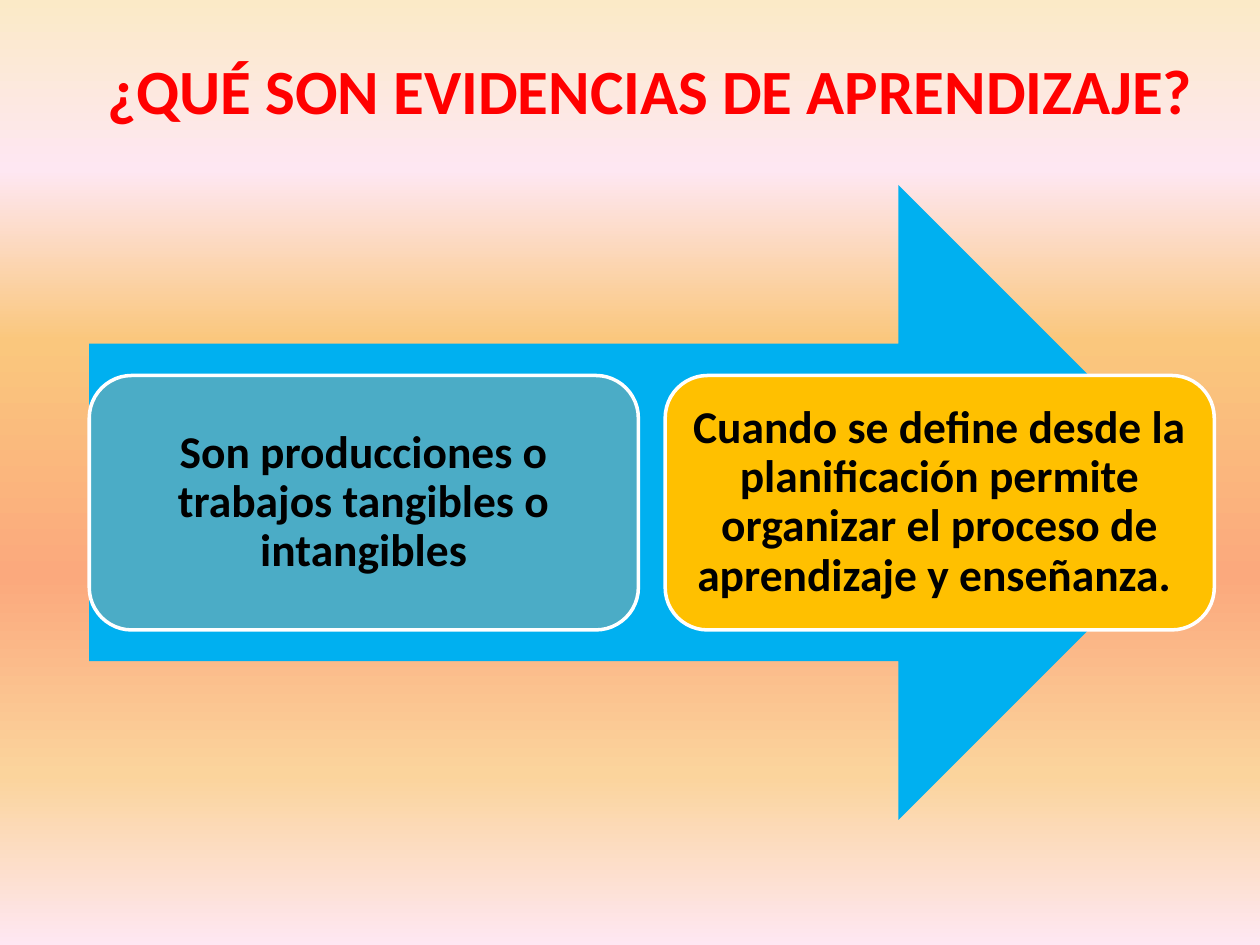
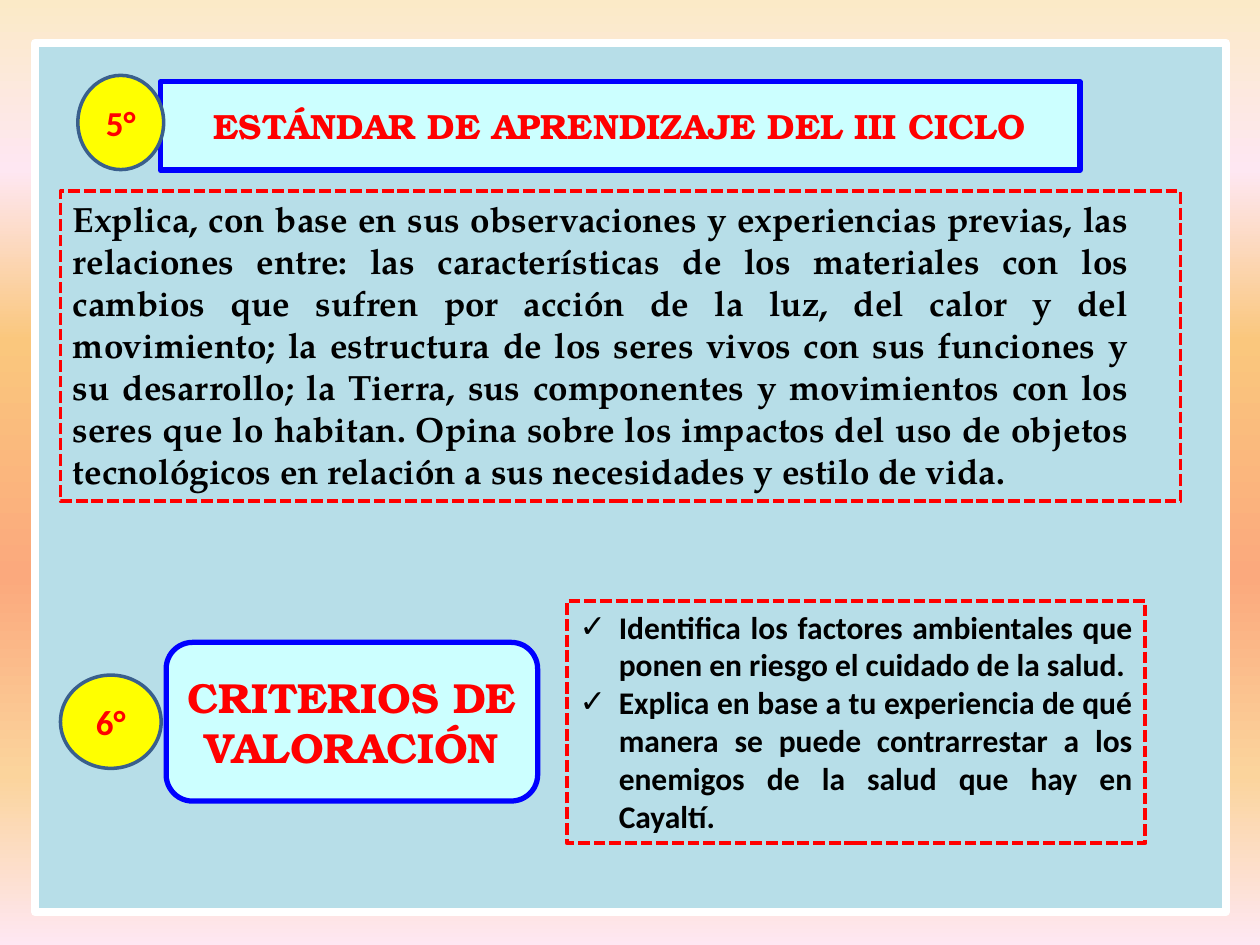
import lxml.etree
import pptx
import pptx.dml.color
import pptx.enum.dml
import pptx.enum.shapes
import pptx.enum.text
import pptx.oxml.ns
import pptx.util

Cm = pptx.util.Cm
Pt = pptx.util.Pt
qn = pptx.oxml.ns.qn
rgb = pptx.dml.color.RGBColor.from_string
Kind = pptx.enum.shapes.MSO_SHAPE
Align = pptx.enum.text.PP_ALIGN
Anchor = pptx.enum.text.MSO_ANCHOR

RED, BLACK, WHITE = "FF0000", "000000", "FFFFFF"
SANS, BONUM, PAGELLA = "Calibri", "TeX Gyre Bonum", "TeX Gyre Pagella"
SKY = [(0, "FBEAC7"), (18, "FEE7F2"), (36, "FAC77D"),
       (61, "FBA97D"), (82, "FBD49C"), (100, "FEE7F2")]


def dress(shape, box, fill=None, line=None, width=1, dash=None):
    """Place a shape and set its fill and outline; None means no paint."""
    shape.left, shape.top, shape.width, shape.height = map(Cm, box)
    shape.shadow.inherit = False
    if fill:
        shape.fill.solid()
        shape.fill.fore_color.rgb = rgb(fill)
    else:
        shape.fill.background()
    if line:
        shape.line.color.rgb = rgb(line)
        shape.line.width = Pt(width)
        shape.line.dash_style = dash
    else:
        shape.line.fill.background()
    return shape


def write(shape, text, face, size, color, align=Align.CENTER, anchor=Anchor.MIDDLE):
    """Fill a shape with bold text, one paragraph a line."""
    frame = shape.text_frame
    frame.text = text
    frame.word_wrap = True
    frame.auto_size = pptx.enum.text.MSO_AUTO_SIZE.NONE
    frame.vertical_anchor = anchor
    for para in frame.paragraphs:
        para.alignment = align
        para.space_before = Pt(0)
        para.font.name = face
        para.font.size = Pt(size)
        para.font.bold = True
        para.font.color.rgb = rgb(color)
    return frame


deck = pptx.Presentation()
deck.slide_width, deck.slide_height = Cm(25.4), Cm(19.05)

# Shared background: vertical gradient on the master
master = deck.slide_master
back = master.background.fill
back.gradient()
back.gradient_angle = 270
stops = master.element.find(".//" + qn("a:gsLst"))
for stop in list(stops):
    stops.remove(stop)
for place, color in SKY:
    stop = lxml.etree.SubElement(stops, qn("a:gs"), pos=str(place * 1000))
    lxml.etree.SubElement(stop, qn("a:srgbClr"), val=color)

# Slide 1: what learning evidence is
slide = deck.slides.add_slide(deck.slide_layouts[5])
title = dress(slide.shapes.title, (1.7, 0.91, 22.81, 1.8))
write(title, "¿QUÉ SON EVIDENCIAS DE APRENDIZAJE?", SANS, 36, RED)

arrow = slide.shapes.add_shape(Kind.RIGHT_ARROW, 0, 0, 0, 0)
dress(arrow, (1.8, 3.73, 22.71, 12.8), "00B0F0")

cards = [
    ("4BACC6", "Son producciones o trabajos tangibles o intangibles"),
    ("FFC000", "Cuando se define desde la planificación permite organizar "
               "el proceso de aprendizaje y enseñanza. "),
]
for i, (fill, text) in enumerate(cards):
    card = slide.shapes.add_shape(Kind.ROUNDED_RECTANGLE, 0, 0, 0, 0)
    dress(card, (1.8 + 11.61 * i, 7.57, 11.07, 5.13), fill, WHITE, 2)
    frame = write(card, text, SANS, 26, BLACK)
    frame.margin_left = frame.margin_right = Cm(0.28)
    frame.margin_top = frame.margin_bottom = Cm(0.28)
    frame.paragraphs[0].line_spacing = 0.9

# Slide 2: standard and criteria
slide = deck.slides.add_slide(deck.slide_layouts[1])
shapes = slide.shapes
dots = pptx.enum.dml.MSO_LINE.SQUARE_DOT

panel = shapes.add_shape(Kind.RECTANGLE, 0, 0, 0, 0)
dress(panel, (0.71, 0.86, 24, 17.53), "B7DEE8", WHITE, 4.5)
shapes.title.element.addprevious(panel.element)

title = dress(shapes.title, (3.23, 1.65, 18.54, 1.78), "CCFFFF", "0000FF", 3)
form = lxml.etree.Element(qn("a:prstGeom"), prst="roundRect")
lxml.etree.SubElement(form, qn("a:avLst"))
title.element.spPr.insert(1, form)
write(title, "ESTÁNDAR DE APRENDIZAJE DEL III CICLO", BONUM, 20, RED)

norm = shapes.add_shape(Kind.RECTANGLE, 0, 0, 0, 0)
dress(norm, (1.22, 3.86, 22.58, 6.25), None, RED, 2.25, dots)
frame = write(
    norm,
    "Explica, con base en sus observaciones y experiencias previas, las relaciones "
    "entre: las características de los materiales con los cambios que sufren por "
    "acción de la luz, del calor y del movimiento; la estructura de los seres vivos "
    "con sus funciones y su desarrollo; la Tierra, sus componentes y movimientos con "
    "los seres que lo habitan. Opina sobre los impactos del uso de objetos "
    "tecnológicos en relación a sus necesidades y estilo de vida.",
    PAGELLA, 20, BLACK, Align.JUSTIFY, Anchor.TOP)
frame.margin_right = Cm(1.04)

label = shapes.add_shape(Kind.ROUNDED_RECTANGLE, 0, 0, 0, 0)
dress(label, (3.35, 12.95, 7.49, 3.2), "CCFFFF", "0000FF", 3)
write(label, "CRITERIOS DE VALORACIÓN", BONUM, 24, RED)

for text, box in [("5°", (1.57, 1.52, 1.73, 1.9)), ("6°", (1.22, 13.61, 2.03, 1.88))]:
    badge = shapes.add_shape(Kind.OVAL, 0, 0, 0, 0)
    dress(badge, box, "FFFF00", "3A5F8C", 2)
    write(badge, text, SANS, 20, RED)

goals = dress(slide.placeholders[1], (11.43, 12.12, 11.66, 4.88), None, RED, 2.25, dots)
frame = write(
    goals,
    "Identifica los factores ambientales que ponen en riesgo el cuidado de la salud.\n"
    "Explica en base a tu experiencia de qué manera se puede contrarrestar a los "
    "enemigos de la salud que hay en Cayaltí.",
    SANS, 18, BLACK, Align.JUSTIFY, Anchor.TOP)
hang = int(Cm(0.79))
for para in frame.paragraphs:
    props = para.font and para.runs[0].font and para.alignment is not None
    props = frame.paragraphs[0].alignment and para.line_spacing
for props in goals.element.iter(qn("a:pPr")):
    props.set("marL", str(hang))
    props.set("indent", str(-hang))
    tick = lxml.etree.Element(qn("a:buChar"), char="✓")
    props.find(qn("a:defRPr")).addprevious(tick)

deck.save("out.pptx")
